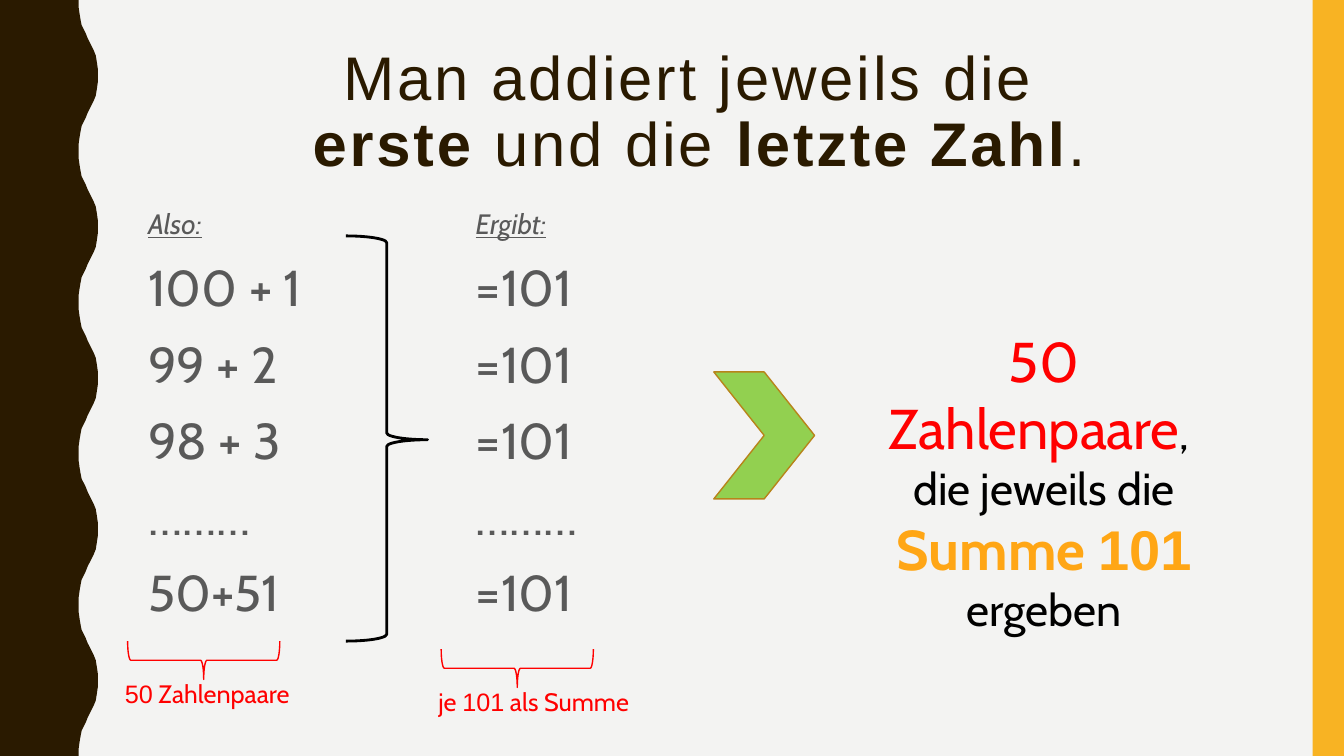
from lxml import etree
from pptx import Presentation, util as u
from pptx.dml import color
from pptx.enum import shapes, text

WIDTH, HEIGHT = u.Inches(13.33), u.Inches(7.5)
BROWN, GREY, RED, BLACK = "2A1A00", "595959", "FF0000", "000000"
HALF_WAVE = [(78, 0), (78, 7), (79, 14), (80, 20), (81, 25), (83, 29), (85, 33),
             (87, 38), (89, 42), (91, 46), (93, 50), (95, 55), (96, 61), (97, 68)]
WAVE_PERIOD, WAVE_COUNT = 150, 5

HEADING = {"size": u.Pt(20), "name": "Cabin", "color": GREY, "italic": True, "underline": True}
ENTRY = {"size": u.Pt(36), "name": "Cabin", "color": GREY}
TITLE = {"size": u.Pt(44), "name": "Arial", "color": BROWN}
TITLE_BOLD = {**TITLE, "bold": True}
NOTE = {"size": u.Pt(18), "name": "Cabin", "color": RED}
NOTE_NUMBER = {**NOTE, "name": "Arial"}
RESULT = {"size": u.Pt(32), "name": "Cabin", "color": BLACK}
RESULT_COUNT = {**RESULT, "size": u.Pt(40), "color": RED}
RESULT_SUM = {**RESULT_COUNT, "color": "FFA615", "bold": True}


def rgb(value):
    """Turn a hex string into a colour."""
    return color.RGBColor.from_string(value)


def place(left, top, width, height):
    """Turn percentages of the slide into lengths."""
    return [int(share * side / 100) for share, side in
            ((left, WIDTH), (top, HEIGHT), (width, WIDTH), (height, HEIGHT))]


def paint(shape, fill=None, line=None, weight=1):
    """Set fill and line of a shape and drop its shadow."""
    shape.shadow.inherit = False
    for part, value in ((shape.fill, fill), (shape.line.fill, line)):
        if value:
            part.solid()
            part.fore_color.rgb = rgb(value)
        else:
            part.background()
    if line:
        shape.line.width = u.Pt(weight)
    return shape


def add_preset(slide, kind, box, **look):
    """Add a painted preset shape."""
    return paint(slide.shapes.add_shape(kind, *place(*box)), **look)


def add_text(slide, box, paragraphs, tracking=0, **layout):
    """Add a wrapped text box from lists of (text, format) runs."""
    frame = slide.shapes.add_textbox(*place(*box)).text_frame
    frame.word_wrap = True
    for index, runs in enumerate(paragraphs):
        paragraph = frame.paragraphs[0] if index == 0 else frame.add_paragraph()
        for name, value in layout.items():
            if index or name != "space_before":
                setattr(paragraph, name, value)
        for words, style in runs:
            if words == "\n":
                paragraph.add_line_break()
                continue
            run = paragraph.add_run()
            run.text = words
            for name, value in style.items():
                if name == "color":
                    run.font.color.rgb = rgb(value)
                else:
                    setattr(run.font, name, value)
            if tracking:
                run.font._element.set("spc", str(tracking))


def add_wavy_edge(slide):
    """Draw the dark band whose right edge repeats one wave."""
    crest = HALF_WAVE + [(97, 75)]
    wave = crest + [(x, WAVE_PERIOD - y) for x, y in reversed(HALF_WAVE)]
    edge = [(x, y + WAVE_PERIOD * count) for count in range(WAVE_COUNT) for x, y in wave]
    builder = slide.shapes.build_freeform(0, 0, scale=u.Inches(1) / 100)
    builder.add_line_segments(edge + [(0, WAVE_PERIOD * WAVE_COUNT)], close=True)
    paint(builder.convert_to_shape(), fill=BROWN)


def add_list(slide, left, heading, entries):
    """Add a column with a heading and its calculation entries."""
    paragraphs = [[(heading, HEADING)]] + [[(entry, ENTRY)] for entry in entries]
    add_text(slide, (left, 26.27, 20.18, 64.93), paragraphs,
             line_spacing=1.1, space_before=u.Pt(7))


def add_braced_note(slide, left, top, runs):
    """Add a red note below a brace that points down at it."""
    add_text(slide, (left, top, 18, 5.33), [runs])
    brace = add_preset(slide, shapes.MSO_SHAPE.RIGHT_BRACE,
                       (left + 5.18, top - 11.8, 2.85, 20.13), line=RED)
    brace.rotation = 90


def main():
    """Build and save the slide."""
    presentation = Presentation()
    presentation.slide_width, presentation.slide_height = WIDTH, HEIGHT
    slide = presentation.slides.add_slide(presentation.slide_layouts[6])
    slide.background.fill.solid()
    slide.background.fill.fore_color.rgb = rgb("F3F3F2")
    preset = shapes.MSO_SHAPE
    centre = text.PP_ALIGN.CENTER

    add_wavy_edge(slide)
    add_preset(slide, preset.RECTANGLE, (97.67, 0, 2.33, 100), fill="F8B323")
    add_text(slide, (10.28, 5.6, 83.5, 21.73),
             [[("Man addiert jeweils die ", TITLE), ("\n", TITLE), ("erste", TITLE_BOLD),
               (" und die ", TITLE), ("letzte Zahl", TITLE_BOLD), (".", TITLE)]],
             tracking=200, alignment=centre, line_spacing=0.9)
    add_list(slide, 10.28, "Also:", ["100 + 1", "99 + 2", "98 + 3", "………", "50+51"])
    add_list(slide, 34.66, "Ergibt:", ["=101"] * 3 + ["………", "=101"])
    add_text(slide, (63.54, 42.53, 28.28, 33.6),
             [[("50 Zahlenpaare", RESULT_COUNT), (", ", RESULT)],
              [("die jeweils die ", RESULT), ("Summe ", RESULT_SUM),
               ("101 ", {**RESULT_SUM, "name": "Arial"}), ("ergeben", RESULT)]],
             alignment=centre)
    brace = add_preset(slide, preset.RIGHT_BRACE, (25.73, 31.2, 6.08, 53.6),
                       line=BLACK, weight=2)
    brace.adjustments[1] = 0.503
    add_braced_note(slide, 8.55, 89.07, [("50", NOTE_NUMBER), (" Zahlenpaare", NOTE)])
    add_braced_note(slide, 31.88, 90.13,
                    [("je ", NOTE), ("101", NOTE_NUMBER), (" als Summe", NOTE)])
    add_preset(slide, preset.CHEVRON, (53.11, 49.2, 7.5, 16.8), fill="92D050", line="B7841A")
    presentation.save("out.pptx")


if __name__ == "__main__":
    main()
